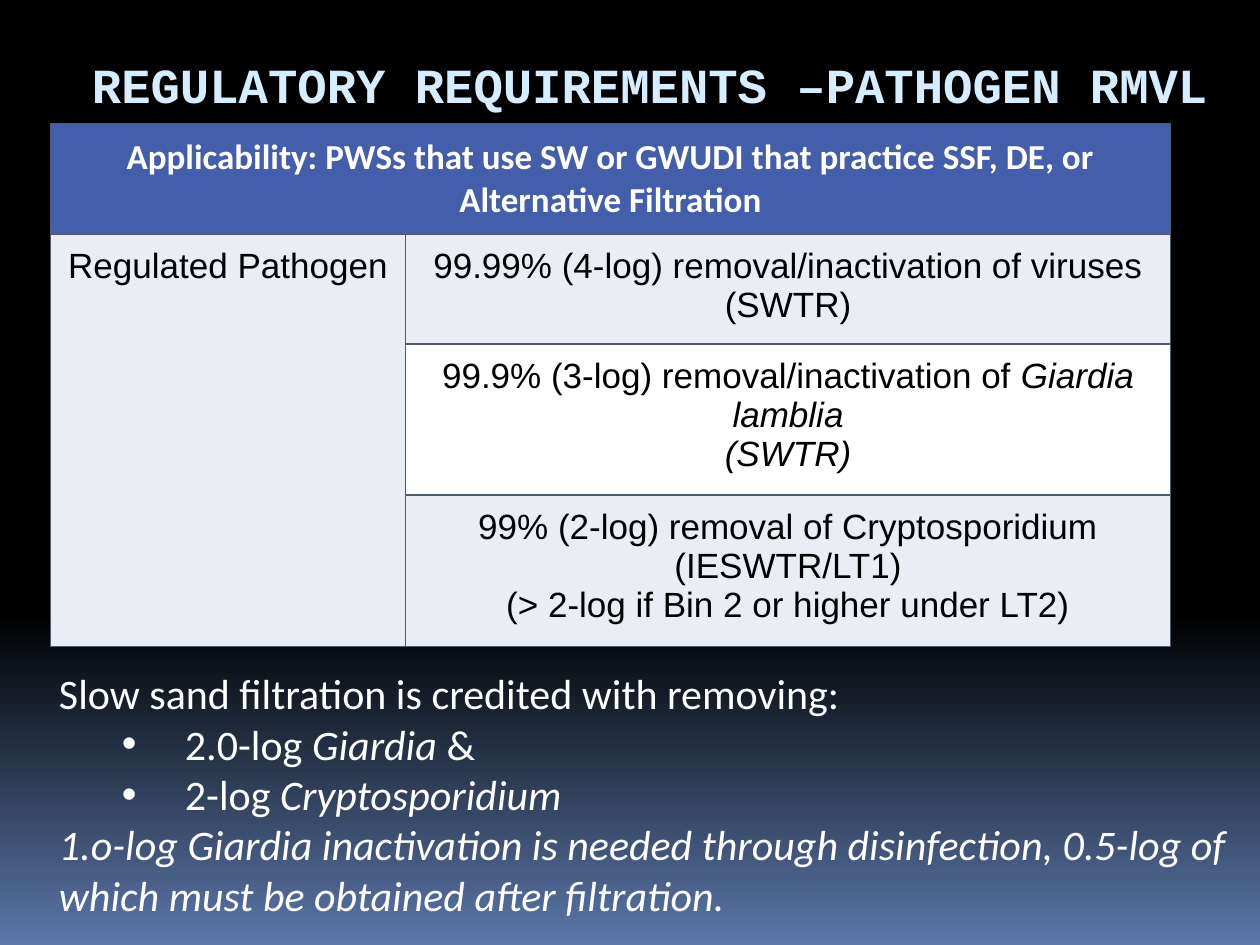
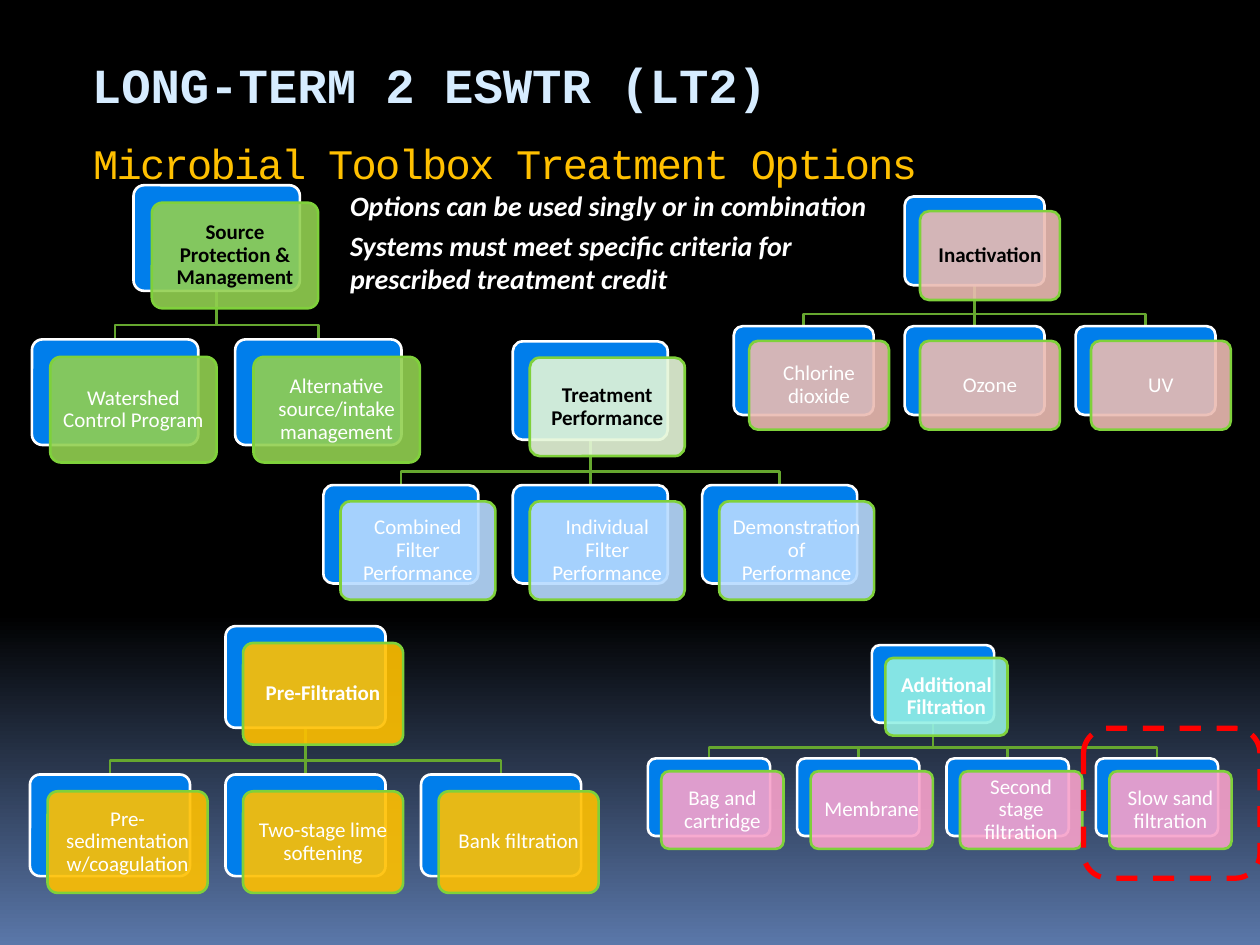
from copy import deepcopy

from lxml import etree
from pptx import Presentation
from pptx import util as u
from pptx.dml.color import RGBColor
from pptx.enum import dml, shapes, text
from pptx.oxml import ns

COLORS = {
    "black": "000000", "white": "FFFFFF", "dusk": "5A77A9",
    "title": "D6ECFF", "gold": "FFC000", "header": "435EAA",
    "band": "EBEDF5", "border": "4E5B6F", "back": "007EEB",
    "edge": "7FD13B", "branch": "66A72F", "alert": "FF0000",
    "rose": "EABBB2", "mint": "E5F6D8", "sky": "B7DBFF",
    "leaf": "92D050", "aqua": "94F0E4", "pink": "F7A1CA",
}
BODY, HEADING, TABLE = "Calibri", "Courier New", "Arial"

# The slide is a grid of 100 columns by 75 rows of square cells
WIDTH, HEIGHT = u.Inches(10), u.Inches(7.5)
CELL = WIDTH / 100

# Tree proportions, as shares of a card's width
CARD_HEIGHT, PITCH, DROP = 0.635, 1.222, 0.927
OFFSET_X, OFFSET_Y, ELBOW = 0.11, 0.105, 0.84

# Root label, root text colour, root fill, child fill, left, top, card width, children
TREES = [
    ("Inactivation", "black", "rose", "rose", 71.8, 15.6, 11.1,
     ["Chlorine dioxide", "Ozone", "UV"]),
    ("Pre-Filtration", "white", "gold", "gold", 17.9, 49.7, 12.7,
     ["Pre-sedimentation w/coagulation", "Two-stage lime softening",
      "Bank filtration"]),
    ("Treatment Performance", "black", "mint", "sky", 40.7, 27.1, 12.3,
     ["Combined Filter Performance", "Individual Filter Performance",
      "Demonstration of Performance"]),
    ("Source Protection & Management", "black", "leaf", "leaf", 10.6, 14.7, 13.2,
     ["Watershed Control Program", "Alternative source/intake management"]),
    ("Additional Filtration", "white", "aqua", "pink", 69.2, 51.2, 9.7,
     ["Bag and cartridge", "Membrane", "Second stage filtration",
      "Slow sand filtration"]),
]

# Asterisks enclose italic words
REMOVALS = [
    ["99.99% (4-log) removal/inactivation of viruses", "(SWTR)"],
    ["99.9% (3-log) removal/inactivation of *Giardia lamblia*", "*(SWTR)*"],
    ["99% (2-log) removal of Cryptosporidium", "(IESWTR/LT1)",
     "(> 2-log if Bin 2 or higher under LT2)"],
]
CREDITS = [
    "Slow sand filtration is credited with removing:",
    "2.0-log *Giardia *&",
    "2-log *Cryptosporidium*",
    "*1.o-log Giardia inactivation is needed through disinfection, "
    "0.5-log of which must be obtained after filtration.*",
]


def grid(*counts):
    return [u.Emu(round(count * CELL)) for count in counts]


def rgb(name):
    return RGBColor.from_string(COLORS[name])


def write(frame, lines, size, font, color, bold=False, align=None):
    """Fill a text frame, one paragraph a line."""
    frame.word_wrap = True
    for number, line in enumerate(lines):
        para = frame.add_paragraph() if number else frame.paragraphs[0]
        para.alignment = align
        for index, part in enumerate(line.split("*")):
            if not part:
                continue
            span = para.add_run()
            span.text = part
            span.font.size, span.font.name = u.Pt(size), font
            span.font.color.rgb = rgb(color)
            span.font.bold, span.font.italic = bold, index % 2 == 1


def set_margins(frame, left, top, right, bottom):
    (frame.margin_left, frame.margin_top,
     frame.margin_right, frame.margin_bottom) = grid(left, top, right, bottom)


def add_text(page, place, lines, size, font, color, bold=False):
    box = page.shapes.add_textbox(*grid(*place))
    write(box.text_frame, lines, size, font, color, bold)
    return box.text_frame


def set_background(master):
    """Black down to 65 percent, then fading to dusk blue."""
    fill = master.background.fill
    fill.gradient()
    fill.gradient_angle = 270
    for stop, name, position in zip(fill.gradient_stops, ("black", "dusk"), (0, 1)):
        stop.color.rgb, stop.position = rgb(name), position
    stops = master.element.find(".//" + ns.qn("a:gsLst"))
    middle = deepcopy(stops[0])
    middle.set("pos", "65000")
    stops.insert(1, middle)


def add_page(deck, title):
    page = deck.slides.add_slide(deck.slide_layouts[5])
    holder = page.shapes.title
    holder.left, holder.top, holder.width, holder.height = grid(6.3, 2.9, 91.2, 5.7)
    frame = holder.text_frame
    frame.auto_size = text.MSO_AUTO_SIZE.NONE
    frame.vertical_anchor = text.MSO_ANCHOR.TOP
    set_margins(frame, 1, 1.4, 1, 0)
    write(frame, [title], 28, HEADING, "title", True, text.PP_ALIGN.LEFT)
    return page


def set_borders(cell):
    properties = cell._tc.get_or_add_tcPr()
    for side in "LRTB":
        line = etree.SubElement(properties, ns.qn("a:ln" + side), w=str(u.Pt(1)))
        solid = etree.SubElement(line, ns.qn("a:solidFill"))
        etree.SubElement(solid, ns.qn("a:srgbClr"), val=COLORS["border"])


def add_pathogen_table(page):
    table = page.shapes.add_table(4, 2, *grid(4, 9.8, 88.9, 41.4)).table
    for column, width in zip(table.columns, grid(28.2, 60.7)):
        column.width = width
    for row, height in zip(table.rows, grid(8.7, 8.7, 12, 12)):
        row.height = height
    row_fills = ["header", "band", "white", "band"]
    for row, name in zip(table.rows, row_fills):
        for cell in row.cells:
            set_margins(cell, 1, 1, 1, 1)
            set_borders(cell)
            cell.fill.solid()
            cell.fill.fore_color.rgb = rgb(name)
    table.cell(0, 0).merge(table.cell(0, 1))
    table.cell(1, 0).merge(table.cell(3, 0))
    center = text.PP_ALIGN.CENTER
    write(table.cell(0, 0).text_frame,
          ["Applicability: PWSs that use SW or GWUDI that practice SSF, DE, or "
           "Alternative Filtration"], 20, BODY, "white", True, center)
    write(table.cell(1, 0).text_frame, ["Regulated Pathogen"],
          20, TABLE, "black", align=center)
    for number, lines in enumerate(REMOVALS, 1):
        write(table.cell(number, 1).text_frame, lines, 20, TABLE, "black", align=center)


def set_bullet(para):
    para.level = 1
    properties = para._p.get_or_add_pPr()
    properties.set("marL", str(u.Inches(1)))
    properties.set("indent", str(u.Inches(-0.5)))
    etree.SubElement(properties, ns.qn("a:buFont"), typeface="Arial")
    etree.SubElement(properties, ns.qn("a:buChar"), char="•")


def add_rounded(group, place, fill, line, weight=1.5):
    shape = group.add_shape(shapes.MSO_SHAPE.ROUNDED_RECTANGLE, *grid(*place))
    shape.shadow.inherit = False
    shape.line.color.rgb, shape.line.width = rgb(line), u.Pt(weight)
    if fill:
        shape.fill.solid()
        shape.fill.fore_color.rgb = rgb(fill)
    else:
        shape.fill.background()
    return shape


def add_card(group, label, left, top, width, fill, color="white", bold=False):
    """A blue card with a translucent labelled card shifted over it."""
    height = width * CARD_HEIGHT
    back = add_rounded(group, (left, top, width, height), "back", "white")
    front = add_rounded(group, (left + width * OFFSET_X, top + width * OFFSET_Y,
                                width, height), fill, "edge")
    for card in (back, front):
        card.adjustments[0] = 0.1
    tint = front.fill._xPr.find(".//" + ns.qn("a:srgbClr"))
    etree.SubElement(tint, ns.qn("a:alpha"), val="90000")
    frame = front.text_frame
    frame.vertical_anchor = text.MSO_ANCHOR.MIDDLE
    set_margins(frame, 0.7, 0.7, 0.7, 0.7)
    write(frame, [label], 12, BODY, color, bold, text.PP_ALIGN.CENTER)
    frame.paragraphs[0].line_spacing = 0.9


def add_branch(group, start, elbow, end):
    """A straight line down, or a line with two bends."""
    if abs(start[0] - end[0]) < 0.01:
        branch = group.add_connector(shapes.MSO_CONNECTOR.STRAIGHT,
                                     *grid(*start), *grid(*end))
        etree.SubElement(branch._element.spPr, ns.qn("a:effectLst"))
    else:
        points = [grid(start[0], elbow), grid(end[0], elbow), grid(*end)]
        builder = group.build_freeform(*grid(*start))
        builder.add_line_segments(points, close=False)
        branch = builder.convert_to_shape()
        branch.fill.background()
        branch.shadow.inherit = False
    branch.line.color.rgb, branch.line.width = rgb("branch"), u.Pt(1.5)


def add_tree(page, root, color, root_fill, child_fill, left, top, width, children):
    group = page.shapes.add_group_shape().shapes
    middle = (len(children) - 1) / 2
    lefts = [left + (i - middle) * PITCH * width for i in range(len(children))]
    row = top + DROP * width
    start = (left + width / 2, top + CARD_HEIGHT * width)
    for child_left in lefts:
        add_branch(group, start, top + ELBOW * width, (child_left + width / 2, row))
    add_card(group, root, left, top, width, root_fill, color, True)
    for child, child_left in zip(children, lefts):
        add_card(group, child, child_left, row, width, child_fill)


def add_requirements_page(deck):
    page = add_page(deck, "REGULATORY REQUIREMENTS –PATHOGEN RMVL")
    add_pathogen_table(page)
    credits = add_text(page, (3.7, 52.5, 96.3, 21.2), CREDITS, 24, BODY, "white")
    for para in credits.paragraphs[1:3]:
        set_bullet(para)


def add_toolbox_page(deck):
    page = add_page(deck, "LONG-TERM 2 ESWTR (LT2)")

    # Subtitle with tightened letters
    subtitle = add_text(page, (0, 7.4, 100, 8.5),
                        ["Microbial Toolbox Treatment Options"], 24, HEADING, "gold")
    set_margins(subtitle, 7.4, 3.5, 1, 0)
    subtitle.paragraphs[0].runs[0].font._element.set("spc", "-100")

    # Treatment option trees
    for tree in TREES:
        add_tree(page, *tree)

    # Conditions of use
    conditions = add_text(
        page, (26.8, 14.5, 46.2, 14.4),
        ["*Options can be used singly or in combination*",
         "*Systems must meet specific criteria for prescribed treatment credit*"],
        16, BODY, "white", True)
    for para in conditions.paragraphs:
        para.space_before = u.Pt(3.2)

    # Dashed frame around slow sand filtration
    highlight = add_rounded(page.shapes, (86, 57.8, 14, 11.9), None, "alert", 3)
    highlight.line.dash_style = dml.MSO_LINE.DASH


def main():
    deck = Presentation()
    deck.slide_width, deck.slide_height = WIDTH, HEIGHT
    set_background(deck.slide_master)
    add_requirements_page(deck)
    add_toolbox_page(deck)
    deck.save("out.pptx")


if __name__ == "__main__":
    main()
